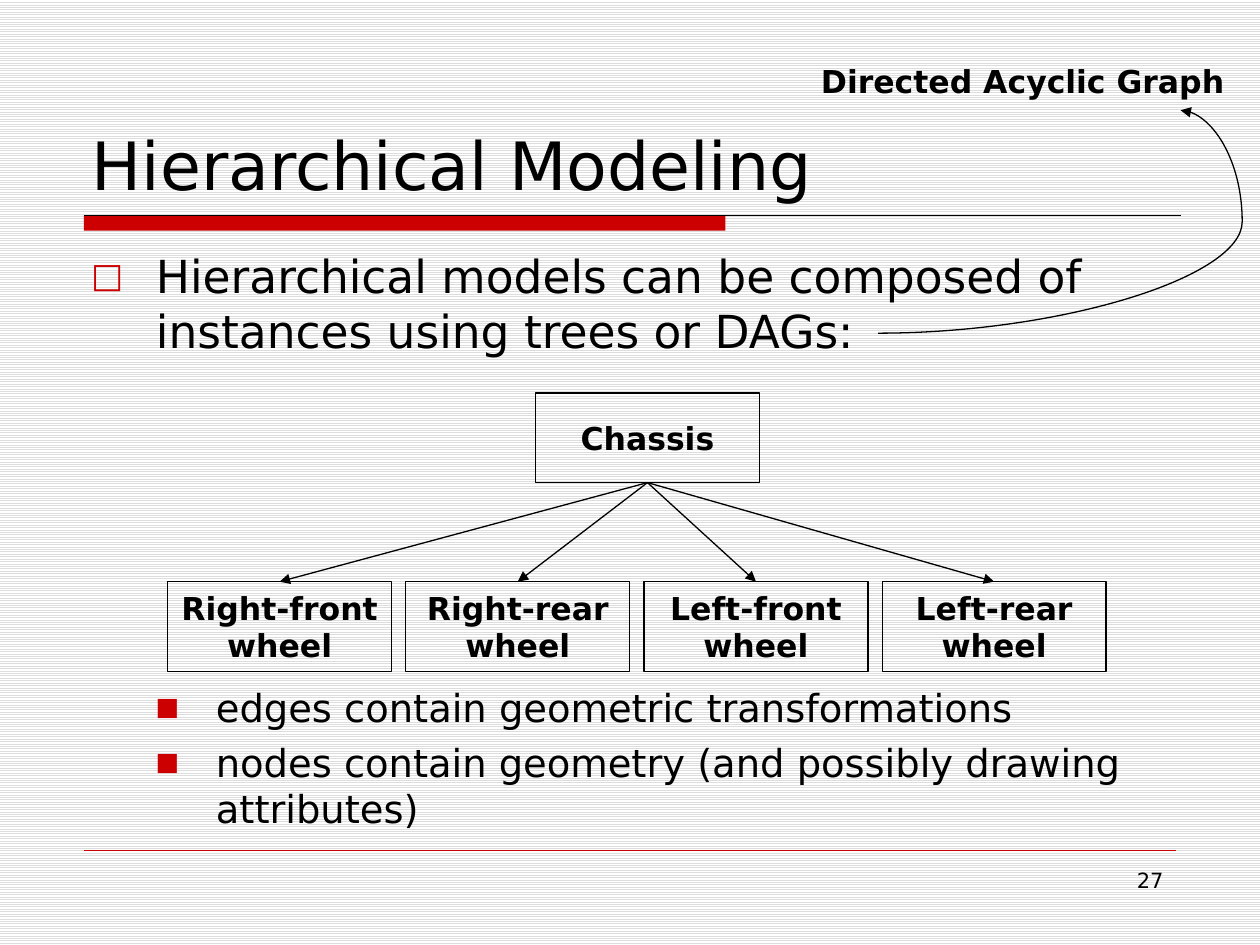
from dataclasses import dataclass

from lxml import etree
from pptx import Presentation
from pptx import util as u
from pptx.dml.color import RGBColor
from pptx.enum import dml, shapes, text
from pptx.oxml import ns


@dataclass(frozen=True)
class Theme:
    font: str = "DejaVu Sans"
    ink: RGBColor = RGBColor(0, 0, 0)
    accent: RGBColor = RGBColor(0xCC, 0, 0)
    stripe: RGBColor = RGBColor(0xDD, 0xDD, 0xDD)
    paper: RGBColor = RGBColor(0xFF, 0xFF, 0xFF)
    title: float = 38
    body: float = 26
    detail: float = 22
    label: float = 18
    number: float = 12
    line: float = 0.75
    hairline: float = 0.25


THEME = Theme()
NODE_WIDTH, NODE_HEIGHT = 128, 51.2
WHEELS = ("Right-front", "Right-rear", "Left-front", "Left-rear")


def points(*values):
    return [u.Pt(value) for value in values]


def add_child(parent, tag, **attributes):
    return etree.SubElement(parent, ns.qn(tag), **attributes)


def style_para(para, words, size, bold=False, align=text.PP_ALIGN.LEFT):
    para.text = words
    para.alignment = align
    para.font.name = THEME.font
    para.font.size = u.Pt(size)
    para.font.bold = bold
    para.font.color.rgb = THEME.ink


def add_text(page, words, bounds, size, wrap=True, anchor=text.MSO_ANCHOR.TOP, **style):
    box = page.shapes.add_textbox(*points(*bounds))
    box.text_frame.word_wrap = wrap
    box.text_frame.vertical_anchor = anchor
    style_para(box.text_frame.paragraphs[0], words, size, **style)
    return box


def add_bullet(para, words, size, mark, mark_scale, margin, hang, before):
    style_para(para, words, size)
    para.space_before = u.Pt(before)
    properties = para._p.get_or_add_pPr()
    properties.set("marL", str(u.Pt(margin)))
    properties.set("indent", str(-u.Pt(hang)))
    # Bullet elements go ahead of the default run properties
    default = properties.find(ns.qn("a:defRPr"))
    color = add_child(properties, "a:buClr")
    add_child(color, "a:srgbClr", val=str(THEME.accent))
    add_child(properties, "a:buSzPct", val=str(mark_scale * 1000))
    add_child(properties, "a:buFont", typeface=THEME.font)
    add_child(properties, "a:buChar", char=mark)
    properties.append(default)


def add_rect(page, bounds):
    box = page.shapes.add_shape(shapes.MSO_SHAPE.RECTANGLE, *points(*bounds))
    box.shadow.inherit = False
    return box


def add_node(page, left, top, *lines):
    box = add_rect(page, (left, top, NODE_WIDTH, NODE_HEIGHT))
    box.fill.background()
    box.line.color.rgb = THEME.ink
    box.line.width = u.Pt(THEME.line)
    frame = box.text_frame
    frame.word_wrap = False
    frame.vertical_anchor = text.MSO_ANCHOR.MIDDLE
    for index, words in enumerate(lines):
        para = frame.add_paragraph() if index else frame.paragraphs[0]
        style_para(para, words, THEME.label, True, text.PP_ALIGN.CENTER)


def add_line(page, start, end, color, width=THEME.line, arrow=None,
             kind=shapes.MSO_CONNECTOR.STRAIGHT):
    line = page.shapes.add_connector(kind, *points(*start, *end))
    line.line.color.rgb = color
    line.line.width = u.Pt(width)
    if arrow:
        add_child(line.line._get_or_add_ln(), arrow, type="triangle")
    add_child(line._element.spPr, "a:effectLst")
    return line


def add_frame(page):
    # Striped background, title rule, footer rule and page number
    fill = page.background.fill
    fill.patterned()
    fill.pattern = dml.MSO_PATTERN.LIGHT_HORIZONTAL
    fill.fore_color.rgb = THEME.stripe
    fill.back_color.rgb = THEME.paper

    bar = add_rect(page, (48, 123.1, 366.5, 8.8))
    bar.fill.solid()
    bar.fill.fore_color.rgb = THEME.accent
    bar.line.fill.background()
    add_line(page, (48, 123.1), (674.8, 123.1), THEME.ink)
    add_line(page, (48, 486), (672, 486), THEME.accent, THEME.hairline)
    add_text(page, "27", (516, 492, 156, 37.5), THEME.number,
             align=text.PP_ALIGN.RIGHT)


def add_body(page):
    box = page.shapes.add_textbox(*points(45, 138.2, 630, 352.8))
    frame = box.text_frame
    frame.word_wrap = True
    add_bullet(frame.paragraphs[0],
               "Hierarchical models can be composed of instances using trees or DAGs:",
               THEME.body, "□", 75, 37, 37, 2)
    # The first detail leaves room for the diagram
    details = (("edges contain geometric transformations", 187),
               ("nodes contain geometry (and possibly drawing attributes)", 5))
    for words, before in details:
        add_bullet(frame.add_paragraph(), words, THEME.detail, "■", 65,
                   71.3, 34.5, before)


def add_tree(page):
    root_left, root_top = 306, 224.6
    wheel_left, wheel_top, pitch = 95.8, 332.4, 136.1
    add_node(page, root_left, root_top, "Chassis")
    root_foot = (root_left + NODE_WIDTH / 2, root_top + NODE_HEIGHT)
    for index, name in enumerate(WHEELS):
        left = wheel_left + index * pitch
        add_node(page, left, wheel_top, name, "wheel")
        add_line(page, root_foot, (left + NODE_WIDTH / 2, wheel_top),
                 THEME.ink, arrow="a:tailEnd")


def add_callout(page):
    add_text(page, "Directed Acyclic Graph", (462, 31.7, 250, 29), THEME.label,
             wrap=False, bold=True)
    # Half a turn makes the curve start at the label and swing out to its right
    curve = add_line(page, (501.8, 190.4), (674.6, 63), THEME.ink,
                     arrow="a:headEnd", kind=shapes.MSO_CONNECTOR.CURVE)
    properties = curve._element.spPr
    properties.find(ns.qn("a:xfrm")).set("rot", "10800000")
    adjustments = properties.find(ns.qn("a:prstGeom")).get_or_add_avLst()
    add_child(adjustments, "a:gd", name="adj1", fmla="val -20400")


def main():
    deck = Presentation()
    deck.slide_width, deck.slide_height = points(720, 540)
    page = deck.slides.add_slide(deck.slide_layouts[6])
    add_frame(page)
    add_text(page, "Hierarchical Modeling", (45.4, 24, 630, 95.8), THEME.title,
             anchor=text.MSO_ANCHOR.BOTTOM)
    add_body(page)
    add_tree(page)
    add_callout(page)
    deck.save("out.pptx")


if __name__ == "__main__":
    main()
